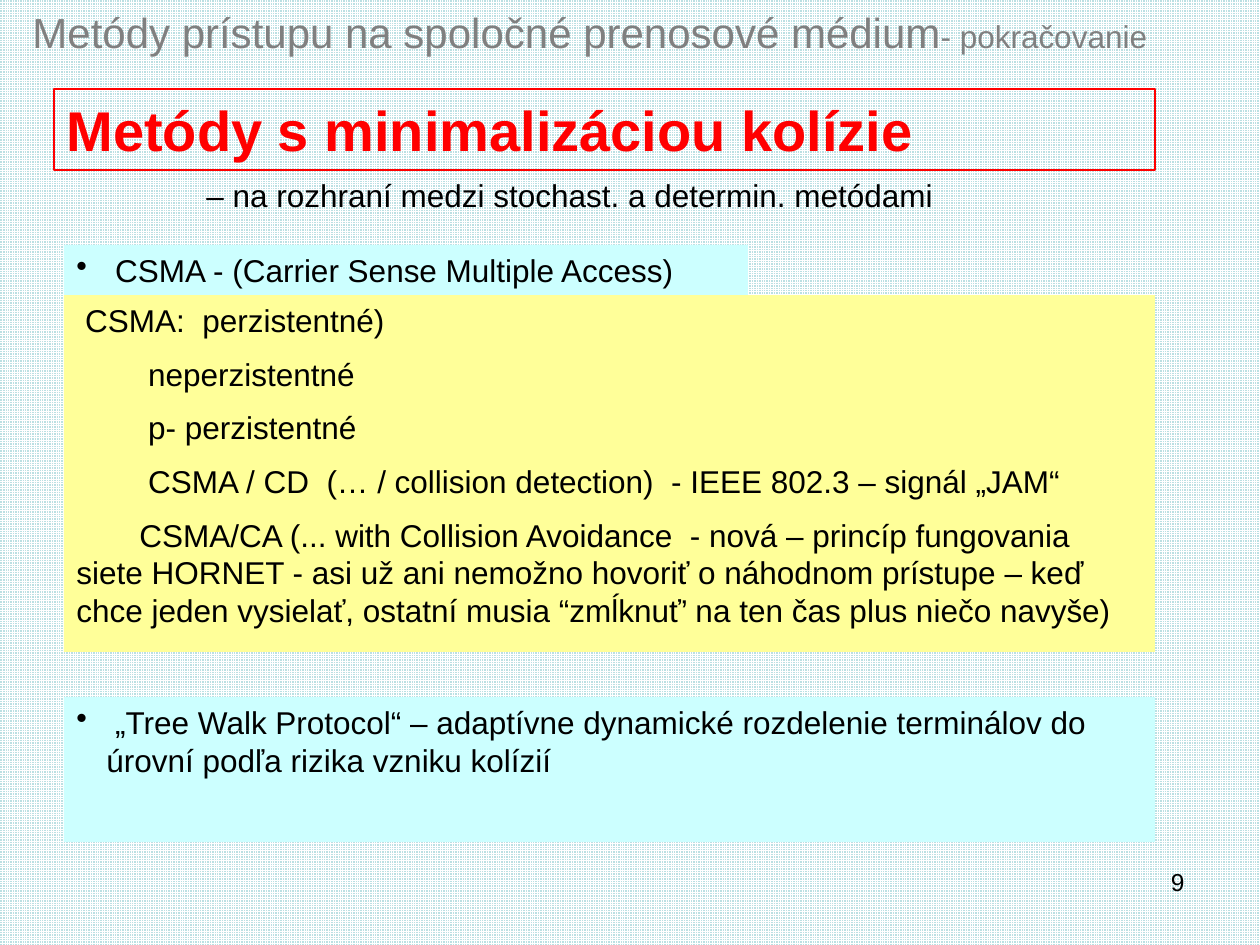
from dataclasses import dataclass

from lxml import etree
from pptx import Presentation
from pptx import util as u
from pptx.dml.color import RGBColor
from pptx.enum import dml, shapes, text
from pptx.oxml.ns import qn

PX = 914400 / 126


@dataclass(frozen=True)
class Theme:
    font: str = "Arial"
    black: str = "000000"
    grey: str = "808080"
    red: str = "FF0000"
    cyan: str = "CCFFFF"
    yellow: str = "FFFF99"
    grid_front: str = "FFFFFF"
    grid_back: str = "BBE0E3"
    heading: int = 32
    title: int = 24
    body: int = 18
    number: int = 14


theme = Theme()


def px(length):
    return u.Emu(round(length * PX))


def add_block(box, lines, size=theme.body, color=theme.black, fill=None, line=None):
    """Add a rectangle of top-left aligned paragraphs; box is left, top, width, height."""
    shape = slide.shapes.add_shape(shapes.MSO_SHAPE.RECTANGLE, *map(px, box))
    shape.shadow.inherit = False
    if fill:
        shape.fill.solid()
        shape.fill.fore_color.rgb = RGBColor.from_string(fill)
    else:
        shape.fill.background()
    if line:
        shape.line.color.rgb = RGBColor.from_string(line)
        shape.line.width = u.Pt(0.75)
    else:
        shape.line.fill.background()
    frame = shape.text_frame
    frame.word_wrap = True
    frame.vertical_anchor = text.MSO_ANCHOR.TOP
    for index, content in enumerate(lines):
        paragraph = frame.paragraphs[0] if index == 0 else frame.add_paragraph()
        if index:
            paragraph.space_before = u.Pt(theme.body / 2)
        paragraph.add_run().text = content
        paragraph.alignment = text.PP_ALIGN.LEFT
        paragraph.font.name = theme.font
        paragraph.font.size = u.Pt(size)
        paragraph.font.color.rgb = RGBColor.from_string(color)
    return frame.paragraphs[0]


presentation = Presentation()
presentation.slide_width, presentation.slide_height = px(1260), px(945)
slide = presentation.slides.add_slide(presentation.slide_layouts[6])

background = slide.background.fill
background.patterned()
background.pattern = dml.MSO_PATTERN.SMALL_GRID
background.fore_color.rgb = RGBColor.from_string(theme.grid_front)
background.back_color.rgb = RGBColor.from_string(theme.grid_back)

number = add_block((903, 861, 294, 65), ["9"], theme.number)
number.alignment = text.PP_ALIGN.RIGHT

title = add_block((20, 0, 1152, 63), ["Metódy prístupu na spoločné prenosové médium"],
                  theme.title, theme.grey)
suffix = title.add_run()
suffix.text = "- pokračovanie"
suffix.font.size = u.Pt(theme.body)

heading = add_block((54, 89, 1101, 81), ["Metódy s minimalizáciou kolízie"],
                    theme.heading, theme.red, line=theme.red)
heading.font.bold = True

add_block((194, 170, 942, 50), ["– na rozhraní medzi stochast. a determin. metódami"])

bullets = [
    ((64, 245, 684, 50), " CSMA - (Carrier Sense Multiple Access)"),
    ((64, 697, 1091, 145), " „Tree Walk Protocol“ – adaptívne dynamické rozdelenie "
                           "terminálov do úrovní podľa rizika vzniku kolízií"),
]
for box, content in bullets:
    properties = add_block(box, [content], fill=theme.cyan)._p.get_or_add_pPr()
    properties.set("marL", str(px(30)))
    properties.set("indent", str(px(-30)))
    bullet = etree.Element(qn("a:buChar"), char="•")
    properties.insert_element_before(bullet, "a:tabLst", "a:defRPr", "a:extLst")

add_block((64, 295, 1091, 357), [
    " CSMA:  perzistentné)",
    "\t neperzistentné",
    "\t p- perzistentné",
    "\t CSMA / CD  (… / collision detection)  - IEEE 802.3 – signál „JAM“",
    "\tCSMA/CA (... with Collision Avoidance  - nová – princíp fungovania siete HORNET"
    " - asi už ani nemožno hovoriť o náhodnom prístupe – keď chce jeden vysielať,"
    " ostatní musia “zmĺknuť’ na ten čas plus niečo navyše)",
], fill=theme.yellow)

presentation.save("out.pptx")
